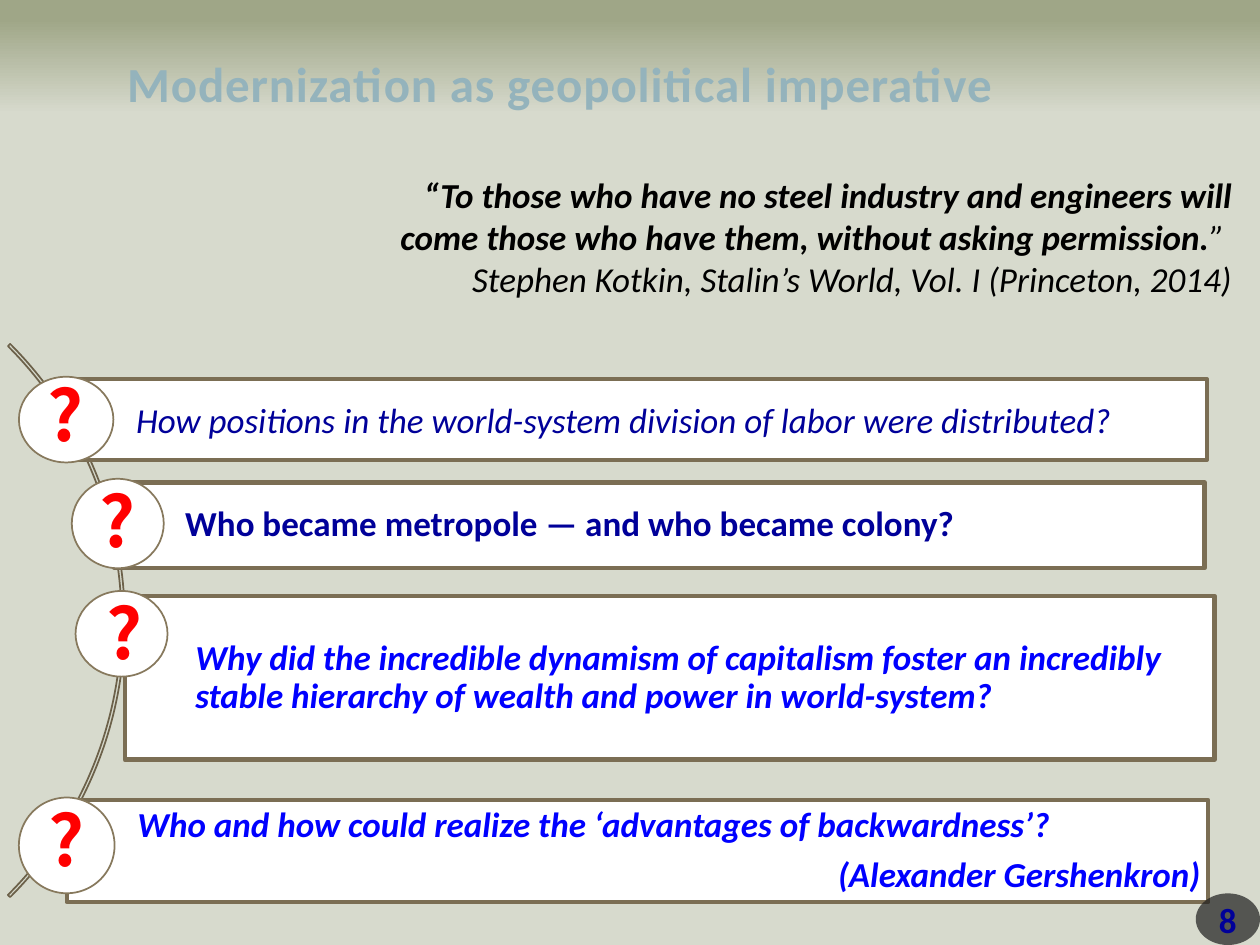
from dataclasses import dataclass

from lxml.etree import SubElement
from pptx import Presentation
from pptx.dml.color import RGBColor
from pptx.enum.shapes import MSO_SHAPE as Preset
from pptx.enum.text import MSO_ANCHOR as Anchor, MSO_AUTO_SIZE as AutoSize, PP_ALIGN as Align
from pptx.oxml.ns import qn
from pptx.util import Inches, Pt

SAGE = RGBColor(0xD7, 0xDA, 0xCD)
OLIVE = RGBColor(0x9F, 0xA6, 0x87)
STEEL = RGBColor(0x94, 0xB3, 0xBC)
ARC_BROWN = RGBColor(0x6C, 0x61, 0x4A)
CARD_BROWN = RGBColor(0x7B, 0x6E, 0x54)
RING_BROWN = RGBColor(0x87, 0x79, 0x5D)
WHITE = RGBColor(0xFF, 0xFF, 0xFF)
BLACK = RGBColor(0, 0, 0)
CHARCOAL = RGBColor(0x1D, 0x1D, 0x1D)
NAVY = RGBColor(0, 0, 0x99)
BLUE = RGBColor(0, 0, 0xFF)
RED = RGBColor(0xFF, 0, 0)


@dataclass
class Question:
    card: tuple
    circle: tuple
    mark: tuple
    lines: tuple
    color: RGBColor
    bold: bool
    italic: bool
    spacing: float = 0.9
    after: float = 7


QUESTIONS = [
    Question((0.52, 3.01, 9.06, 0.64), (0.15, 2.99, 0.75, 0.68), (0.28, 2.9),
             ("How positions in the world-system division of labor were distributed?",),
             NAVY, False, True, spacing=1.0),
    Question((0.91, 3.83, 8.65, 0.68), (0.57, 3.8, 0.73, 0.71), (0.69, 3.74),
             ("Who became metropole — and who became colony?",), NAVY, True, False),
    Question((0.99, 4.73, 8.65, 1.3), (0.6, 4.69, 0.73, 0.68), (0.75, 4.63),
             ("Why did the incredible dynamism of capitalism foster an incredibly "
              "stable hierarchy of wealth and power in world-system?",),
             BLUE, True, True, after=3),
    Question((0.53, 6.35, 9.06, 0.81), (0.15, 6.33, 0.76, 0.76), (0.29, 6.27),
             ("Who and how could realize the ‘advantages of backwardness’?",
              "(Alexander Gershenkron)"), BLUE, True, True),
]


class SlideBuilder:
    font = "Calibri"
    mark_font = "Noto Sans CJK KR"
    size = 20

    def __init__(self, slide):
        self.slide = slide

    def style(self, paragraph, color, size=None, bold=False, italic=False, name=None):
        font = paragraph.font
        font.name = name or self.font
        font.size = Pt(size or self.size)
        font.bold, font.italic = bold, italic
        font.color.rgb = color

    def insets(self, frame, left, top, right, bottom):
        frame.margin_left, frame.margin_top = Inches(left), Inches(top)
        frame.margin_right, frame.margin_bottom = Inches(right), Inches(bottom)

    def background(self):
        fill = self.slide.background.fill
        fill.gradient()
        fill.gradient_angle = 90
        for stop, color, position in zip(fill.gradient_stops, (SAGE, OLIVE), (0.88, 0.98)):
            stop.color.rgb = color
            stop.position = position

    def title(self, text, box):
        heading = self.slide.shapes.title
        heading.left, heading.top, heading.width, heading.height = map(Inches, box)
        frame = heading.text_frame
        frame.text = text
        frame.auto_size = AutoSize.NONE
        frame.vertical_anchor = Anchor.TOP
        self.insets(frame, 0.1, 0.24, 0.1, 0.05)
        paragraph = frame.paragraphs[0]
        paragraph.alignment = Align.LEFT
        paragraph.line_spacing = 0.75
        self.style(paragraph, STEEL, 28, bold=True)
        paragraph.runs[0].font._element.set("spc", "50")

    def shape(self, preset, box, fill=None, line=None, width=1):
        shape = self.slide.shapes.add_shape(preset, *map(Inches, box))
        shape.shadow.inherit = False
        if fill is None:
            shape.fill.background()
        else:
            shape.fill.solid()
            shape.fill.fore_color.rgb = fill
        if line is None:
            shape.line.fill.background()
        else:
            shape.line.color.rgb = line
            shape.line.width = Pt(width)
        return shape

    def arc(self, box):
        arc = self.shape(Preset.BLOCK_ARC, box, line=ARC_BROWN)
        for index, value in enumerate((189, 27, 0.004)):
            arc.adjustments[index] = value

    def text_box(self, box):
        frame = self.slide.shapes.add_textbox(*map(Inches, box)).text_frame
        frame.word_wrap = True
        return frame

    def question(self, question):
        card = self.shape(Preset.RECTANGLE, question.card, WHITE, CARD_BROWN, 2.5)
        frame = card.text_frame
        frame.text = "\n".join(question.lines)
        frame.vertical_anchor = Anchor.MIDDLE
        self.insets(frame, 0.56, 0.06, 0.06, 0.06)
        for index, paragraph in enumerate(frame.paragraphs):
            paragraph.alignment = Align.RIGHT if index else Align.LEFT
            paragraph.line_spacing = question.spacing
            paragraph.space_after = Pt(question.after)
            self.style(paragraph, question.color, bold=question.bold, italic=question.italic)
        self.shape(Preset.OVAL, question.circle, WHITE, RING_BROWN)
        mark = self.text_box((*question.mark, 0.46, 0.77))
        mark.text = "?"
        self.style(mark.paragraphs[0], RED, 40, bold=True, name=self.mark_font)

    def quote(self, words, closing, author, box):
        frame = self.text_box(box)
        citation = frame.paragraphs[0]
        citation.add_run().text = words
        citation.add_run().text = closing
        source = frame.add_paragraph()
        source.text = author
        for paragraph in (citation, source):
            paragraph.alignment = Align.RIGHT
            self.style(paragraph, BLACK, italic=True)
        citation.runs[0].font.bold = True

    def page_number(self, number, box):
        badge = self.shape(Preset.OVAL, box, CHARCOAL)
        color = badge.fill._xPr.find(qn("a:solidFill"))[0]
        SubElement(color, qn("a:alpha")).set("val", "70000")
        frame = badge.text_frame
        frame.text = number
        frame.vertical_anchor = Anchor.MIDDLE
        frame.word_wrap = False
        self.insets(frame, 0.02, 0.05, 0.02, 0.05)
        frame.paragraphs[0].alignment = Align.CENTER
        self.style(frame.paragraphs[0], NAVY, bold=True)


def main():
    deck = Presentation()
    deck.slide_width, deck.slide_height = Inches(10), Inches(7.5)
    builder = SlideBuilder(deck.slides.add_slide(deck.slide_layouts[5]))
    builder.background()
    builder.title("Modernization as geopolitical imperative", (0.91, 0.29, 8.5, 1.26))
    builder.arc((-5.22, 1.82, 6.21, 6.21))
    for question in QUESTIONS:
        builder.question(question)
    builder.quote("“To those who have no steel industry and engineers will come those "
                  "who have them, without asking permission.", "” ",
                  "Stephen Kotkin, Stalin’s World, Vol. I (Princeton, 2014)",
                  (3.03, 1.33, 6.85, 1.11))
    builder.page_number("8", (9.49, 7.09, 0.51, 0.41))
    deck.save("out.pptx")


if __name__ == "__main__":
    main()
